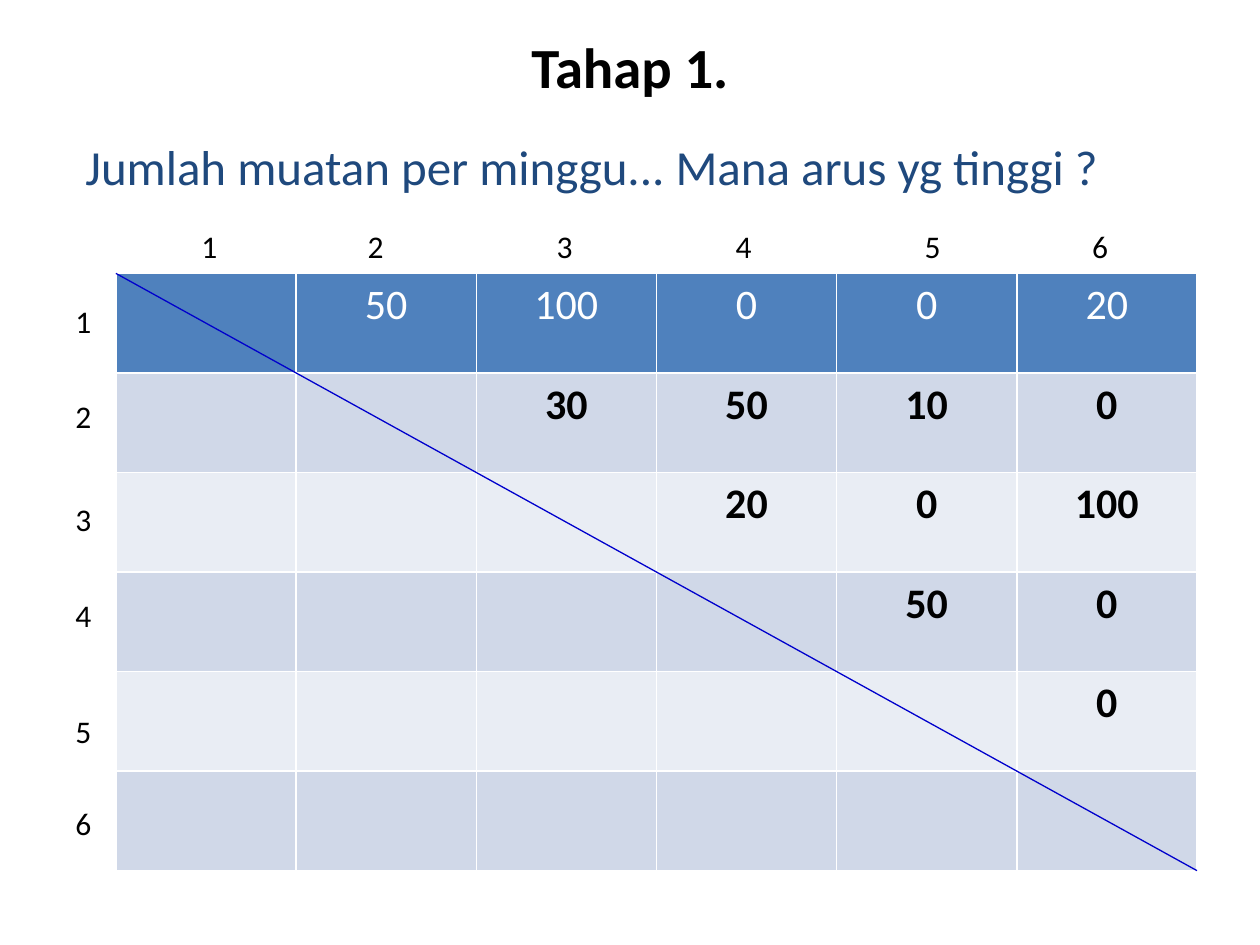
from lxml import etree
from pptx import Presentation
from pptx.dml.color import RGBColor
from pptx.enum import shapes, text
from pptx.oxml import ns
from pptx.util import Inches, Pt

FONT = "Calibri"
COLORS = {
    "ink": "000000",
    "question": "1F497D",
    "header": "4F81BD",
    "header_text": "FFFFFF",
    "dark_band": "D0D8E8",
    "light_band": "E9EDF4",
    "diagonal": "0000CC",
}
LOADS = [
    ["", "50", "100", "0", "0", "20"],
    ["", "", "30", "50", "10", "0"],
    ["", "", "", "20", "0", "100"],
    ["", "", "", "", "50", "0"],
    ["", "", "", "", "", "0"],
    ["", "", "", "", "", ""],
]
LEFT, TOP, COL_WIDTH, ROW_HEIGHT = 0.92, 2.17, 1.43, 0.79
COLUMN_LABEL_LEFTS = [1.5, 2.82, 4.32, 5.74, 7.24, 8.57]
ROW_LABEL_TOPS = [2.35, 3.1, 3.92, 4.68, 5.6, 6.33]


def color(name):
    return RGBColor.from_string(COLORS[name])


def style_text(frame, size, ink, bold=False, align=text.PP_ALIGN.LEFT):
    paragraph = frame.paragraphs[0]
    paragraph.alignment = align
    for run in paragraph.runs:
        run.font.name = FONT
        run.font.size = Pt(size)
        run.font.bold = bold
        run.font.color.rgb = color(ink)


def add_text(slide, wording, left, top, width, height, size, ink="ink",
             wrap=True, anchor=text.MSO_ANCHOR.MIDDLE, **style):
    box = slide.shapes.add_textbox(
        Inches(left), Inches(top), Inches(width), Inches(height))
    frame = box.text_frame
    frame.text = wording
    frame.word_wrap = wrap
    frame.vertical_anchor = anchor
    style_text(frame, size, ink, **style)
    return frame


def add_label(slide, number, left, top):
    frame = add_text(slide, str(number), left, top, 0.34, 0.4, 18,
                     wrap=False, anchor=text.MSO_ANCHOR.TOP)
    frame.auto_size = text.MSO_AUTO_SIZE.SHAPE_TO_FIT_TEXT


def add_load_matrix(slide):
    size = len(LOADS)
    matrix = slide.shapes.add_table(
        size, size, Inches(LEFT), Inches(TOP),
        Inches(COL_WIDTH * size), Inches(ROW_HEIGHT * size)).table
    for column in matrix.columns:
        column.width = Inches(COL_WIDTH)
    for row_index, loads in enumerate(LOADS):
        matrix.rows[row_index].height = Inches(ROW_HEIGHT)
        is_header = row_index == 0
        band = "header" if is_header else (
            "dark_band" if row_index % 2 else "light_band")
        for column_index, load in enumerate(loads):
            cell = matrix.cell(row_index, column_index)
            cell.fill.solid()
            cell.fill.fore_color.rgb = color(band)
            cell.text_frame.text = load
            style_text(cell.text_frame, 24,
                       "header_text" if is_header else "ink",
                       bold=not is_header, align=text.PP_ALIGN.CENTER)


def add_diagonal(slide):
    size = len(LOADS)
    diagonal = slide.shapes.add_connector(
        shapes.MSO_CONNECTOR.STRAIGHT, Inches(LEFT), Inches(TOP),
        Inches(LEFT + COL_WIDTH * size), Inches(TOP + ROW_HEIGHT * size))
    diagonal.line.color.rgb = color("diagonal")
    diagonal.line.width = Pt(0.75)
    etree.SubElement(diagonal._element.spPr, ns.qn("a:effectLst"))


def main():
    deck = Presentation()
    deck.slide_width, deck.slide_height = Inches(10), Inches(7.5)
    slide = deck.slides.add_slide(deck.slide_layouts[6])

    add_text(slide, "Tahap 1.", 0.5, 0.17, 9, 0.7, 32.4,
             bold=True, align=text.PP_ALIGN.CENTER)
    add_load_matrix(slide)
    positions = zip(COLUMN_LABEL_LEFTS, ROW_LABEL_TOPS)
    for number, (left, top) in enumerate(positions, start=1):
        add_label(slide, number, left, 1.75)
        add_label(slide, number, 0.5, top)
    add_text(slide, "Jumlah muatan per minggu... Mana arus yg tinggi ?",
             0.58, 0.97, 9.08, 0.7, 28, ink="question")
    add_diagonal(slide)

    deck.save("out.pptx")


if __name__ == "__main__":
    main()
